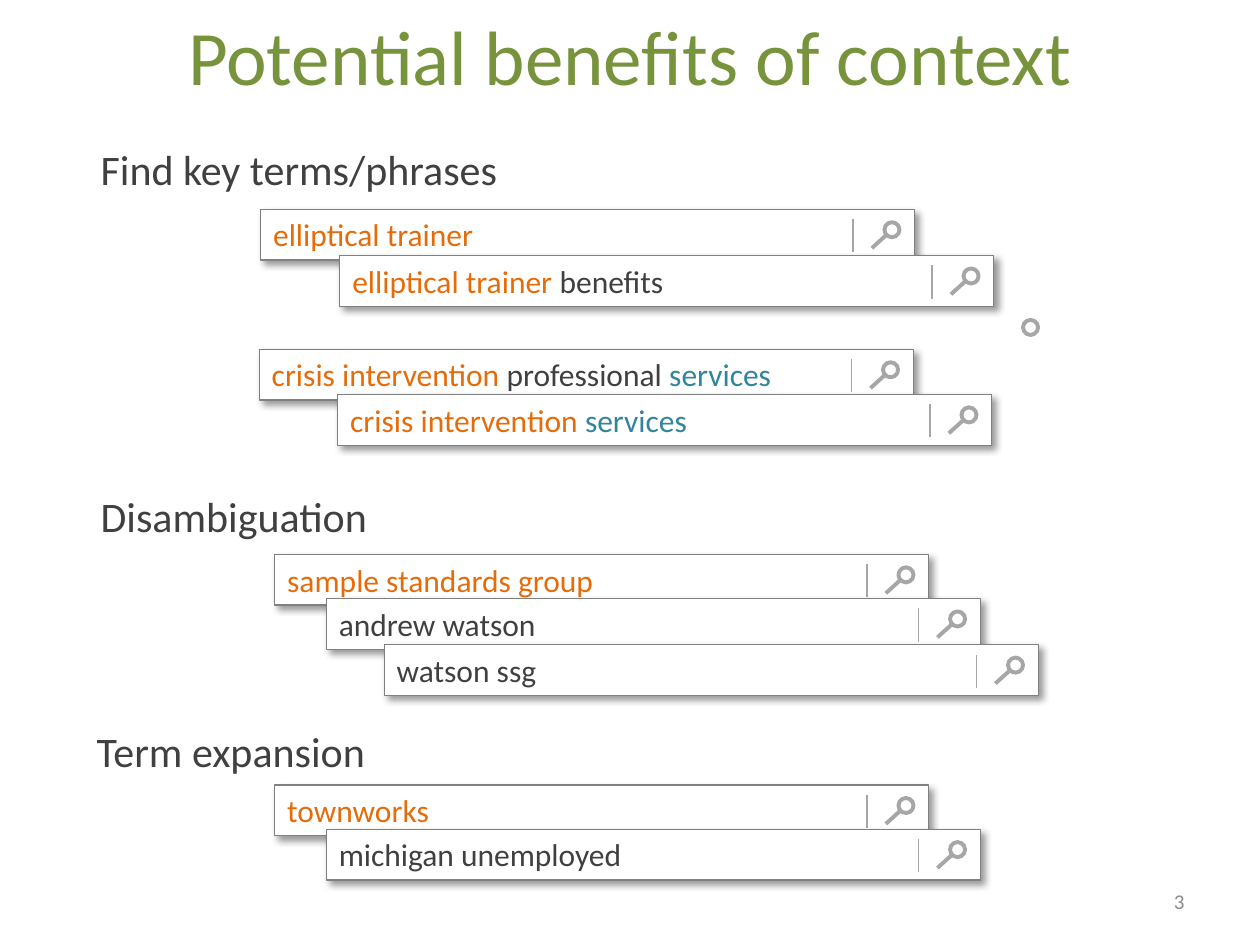
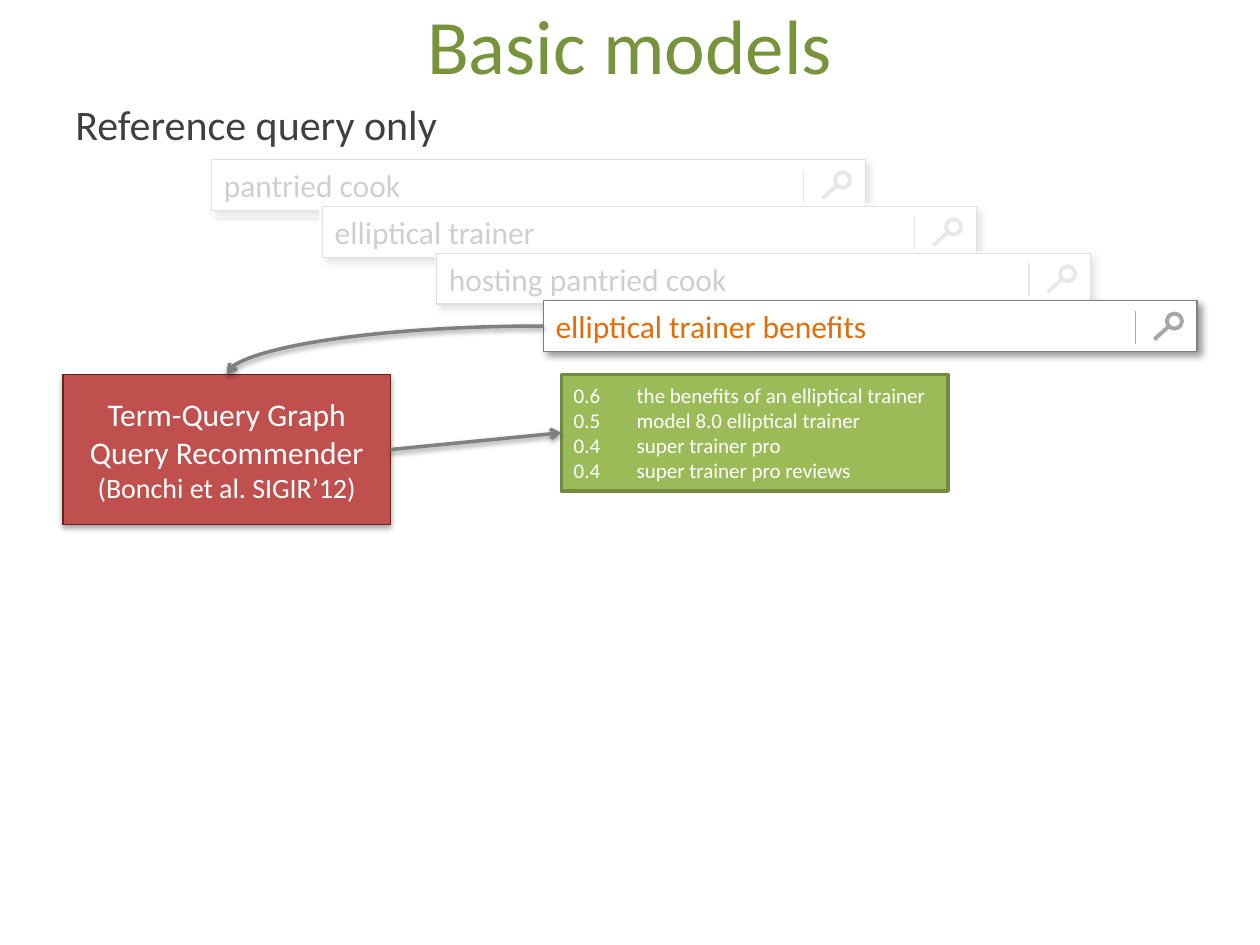
from pptx import Presentation
from pptx.dml.color import RGBColor
from pptx.enum.shapes import MSO_CONNECTOR, MSO_SHAPE
from pptx.enum.text import MSO_ANCHOR, PP_ALIGN
from pptx.oxml import parse_xml
from pptx.oxml.ns import nsdecls, qn
from pptx.oxml.xmlchemy import OxmlElement
from pptx.util import Pt

# Colours and type
FONT = "Calibri"
WHITE = RGBColor(0xFF, 0xFF, 0xFF)
DARK = RGBColor(0x40, 0x40, 0x40)
ORANGE = RGBColor(0xE4, 0x6C, 0x0A)
TEAL = RGBColor(0x31, 0x85, 0x9C)
TITLE_GREEN = RGBColor(0x77, 0x93, 0x3C)
BORDER_GREY = RGBColor(0x80, 0x80, 0x80)
ICON_GREY = RGBColor(0xA6, 0xA6, 0xA6)
NUMBER_GREY = RGBColor(0x8C, 0x8C, 0x8C)
RED = RGBColor(0xC0, 0x50, 0x4D)
DARK_RED = RGBColor(0x63, 0x25, 0x23)
GREEN = RGBColor(0x9B, 0xBB, 0x59)
DARK_GREEN = RGBColor(0x73, 0x8A, 0x42)

# Search box size and shadows (opacity %, blur, distance, angle)
QUERY_WIDTH, QUERY_HEIGHT = 373.7, 29
LENS_SIZE = 8.6
QUERY_SHADOW = (40, 4, 3, 45)
BOX_SHADOW = (35, 3.1, 1.8, 90)
ARROW_SHADOW = (38, 3.1, 1.6, 90)


def shadow_effect(opacity, blur, distance, angle):
    return parse_xml(
        f'<a:outerShdw {nsdecls("a")} blurRad="{Pt(blur)}" dist="{Pt(distance)}" '
        f'dir="{angle * 60000}" algn="tl" rotWithShape="0"><a:srgbClr val="000000">'
        f'<a:alpha val="{opacity * 1000}"/></a:srgbClr></a:outerShdw>')


def add_box(page, left, top, width, height, fill=None, line=None, weight=0.75,
            shadow=None, kind=MSO_SHAPE.RECTANGLE):
    box = page.shapes.add_shape(kind, Pt(left), Pt(top), Pt(width), Pt(height))
    box.shadow.inherit = False
    if shadow:
        box._element.spPr.find(qn("a:effectLst")).append(shadow_effect(*shadow))
    if fill is None:
        box.fill.background()
    else:
        box.fill.solid()
        box.fill.fore_color.rgb = fill
    if line is None:
        box.line.fill.background()
    else:
        box.line.color.rgb = line
        box.line.width = Pt(weight)
    return box


def add_line(page, start, end, color, weight, kind=MSO_CONNECTOR.STRAIGHT, shadow=None):
    line = page.shapes.add_connector(kind, *map(Pt, start + end))
    line.line.color.rgb = color
    line.line.width = Pt(weight)
    effects = OxmlElement("a:effectLst")
    if shadow:
        effects.append(shadow_effect(*shadow))
    line._element.spPr.append(effects)
    return line


def add_arrow(page, source, source_site, target, target_site, kind=MSO_CONNECTOR.STRAIGHT):
    arrow = add_line(page, (0, 0), (1, 1), BORDER_GREY, 2, kind, ARROW_SHADOW)
    arrow.begin_connect(source, source_site)
    arrow.end_connect(target, target_site)
    head = OxmlElement("a:tailEnd")
    head.set("type", "arrow")
    arrow.line._get_or_add_ln().append(head)
    return arrow


def format_span(span, size, color):
    span.font.name = FONT
    span.font.size = Pt(size)
    span.font.color.rgb = color


def write_lines(box, lines, color, align=PP_ALIGN.LEFT, anchor=MSO_ANCHOR.TOP, wrap=True):
    """Fill a box with one paragraph per (text, size) pair."""
    frame = box.text_frame
    frame.word_wrap = wrap
    frame.vertical_anchor = anchor
    frame.text = "\n".join(text for text, size in lines)
    for para, (text, size) in zip(frame.paragraphs, lines):
        para.alignment = align
        for span in para.runs:
            format_span(span, size, color)


def add_label(page, left, top, width, height, text, size, color, **layout):
    box = page.shapes.add_textbox(Pt(left), Pt(top), Pt(width), Pt(height))
    write_lines(box, [(text, size)], color, **layout)


def add_title(page, text, top, anchor):
    add_label(page, 36, top, 648, 90, text, 44, TITLE_GREEN,
              align=PP_ALIGN.CENTER, anchor=anchor)


def add_heading(page, left, top, text):
    add_label(page, left, top, 250, 36, text, 24, DARK, wrap=False)


def add_lens(page, left, top):
    add_box(page, left, top, LENS_SIZE, LENS_SIZE, line=ICON_GREY, weight=2.25,
            kind=MSO_SHAPE.OVAL)


def add_query(page, left, top, *spans):
    """Draw a search box; each span is a (text, colour) pair."""
    box = add_box(page, left, top, QUERY_WIDTH, QUERY_HEIGHT, WHITE, BORDER_GREY,
                  shadow=QUERY_SHADOW)
    frame = box.text_frame
    frame.word_wrap = True
    frame.vertical_anchor = MSO_ANCHOR.TOP
    para = frame.paragraphs[0]
    para.alignment = PP_ALIGN.LEFT
    for text, color in spans:
        span = para.add_run()
        span.text = text
        format_span(span, 18, color)
    # Magnifier and separator
    add_lens(page, left + 356.4, top + 7.4)
    add_line(page, (left + 349.2, top + 22.2), (left + 357.6, top + 14.6), ICON_GREY, 2.25)
    add_line(page, (left + 338.4, top + 24.6), (left + 338.4, top + 5.7), ICON_GREY, 1)
    return box


def add_veil(page, left, top, width):
    """Fade what lies below with translucent white."""
    veil = add_box(page, left, top, width, 36.7, WHITE)
    alpha = OxmlElement("a:alpha")
    alpha.set("val", "75000")
    veil._element.spPr.find(qn("a:solidFill"))[0].append(alpha)


def set_tab(para, position):
    tabs = OxmlElement("a:tabLst")
    tab = OxmlElement("a:tab")
    tab.set("pos", str(Pt(position)))
    tab.set("algn", "l")
    tabs.append(tab)
    para._p.get_or_add_pPr().append(tabs)


def build_benefits(page):
    # Disambiguation
    add_query(page, 157, 316.8, ("sample standards group", ORANGE))
    add_query(page, 186.5, 342, ("andrew watson", DARK))
    add_query(page, 219.6, 368.4, ("watson ssg", DARK))
    add_heading(page, 50.4, 276.5, "Disambiguation")

    # Key terms
    add_query(page, 149, 119.6, ("elliptical trainer", ORANGE))
    add_query(page, 194.2, 146, ("elliptical trainer ", ORANGE), ("benefits", DARK))
    add_lens(page, 584.6, 182.8)
    add_heading(page, 50.4, 78.5, "Find key terms/phrases")
    add_query(page, 148.2, 199.6, ("crisis intervention ", ORANGE),
              ("professional ", DARK), ("services", TEAL))
    add_query(page, 193, 225.4, ("crisis intervention ", ORANGE), ("services", TEAL))

    add_title(page, "Potential benefits of context", 1.4, MSO_ANCHOR.TOP)

    # Term expansion
    add_query(page, 157, 448.6, ("townworks", ORANGE))
    add_query(page, 186.5, 473.8, ("michigan unemployed", DARK))
    add_heading(page, 48.2, 411.2, "Term expansion")

    add_label(page, 516.2, 500.4, 167.8, 28.8, "3", 12, NUMBER_GREY,
              align=PP_ALIGN.RIGHT, anchor=MSO_ANCHOR.MIDDLE)


def build_models(page):
    add_title(page, "Basic models", -20.2, MSO_ANCHOR.MIDDLE)

    # Earlier queries, faded, then the reference query
    add_query(page, 120.8, 91.2, ("pantried cook", DARK))
    add_veil(page, 111.6, 87.8, 412.6)
    add_query(page, 184.2, 118, ("elliptical trainer", DARK))
    add_veil(page, 182.2, 115.9, 392.4)
    add_query(page, 249.4, 144.8, ("hosting pantried cook", DARK))
    add_veil(page, 248.4, 143.3, 392.4)
    reference = add_query(page, 310.4, 171.8, ("elliptical trainer benefits", ORANGE))
    add_heading(page, 36, 52.6, "Reference query only")

    # Recommendations with their scores
    results = add_box(page, 320.8, 214, 221, 66.6, GREEN, DARK_GREEN, 2)
    rows = [("0.6", "the benefits of an elliptical trainer"),
            ("0.5", "model 8.0 elliptical trainer"),
            ("0.4", "super trainer pro"),
            ("0.4", "super trainer pro reviews")]
    write_lines(results, [(f"{score}\t{query}", 12) for score, query in rows], WHITE,
                anchor=MSO_ANCHOR.MIDDLE)
    for para in results.text_frame.paragraphs:
        set_tab(para, 36)

    # Recommender and its arrows
    recommender = add_box(page, 36, 214, 187.2, 85.8, RED, DARK_RED, shadow=BOX_SHADOW)
    write_lines(recommender, [("Term-Query Graph", 18), ("Query Recommender", 18),
                              ("(Bonchi et al. SIGIR’12)", 16)],
                WHITE, PP_ALIGN.CENTER, MSO_ANCHOR.MIDDLE)
    curve = add_arrow(page, reference, 1, recommender, 0, MSO_CONNECTOR.CURVE)
    curve._element.spPr.find(qn("a:prstGeom")).set("prst", "curvedConnector2")
    add_arrow(page, recommender, 3, results, 1)


def main():
    deck = Presentation()
    deck.slide_width, deck.slide_height = Pt(720), Pt(540)
    for build in (build_benefits, build_models):
        build(deck.slides.add_slide(deck.slide_layouts[6]))
    deck.save("out.pptx")


if __name__ == "__main__":
    main()
